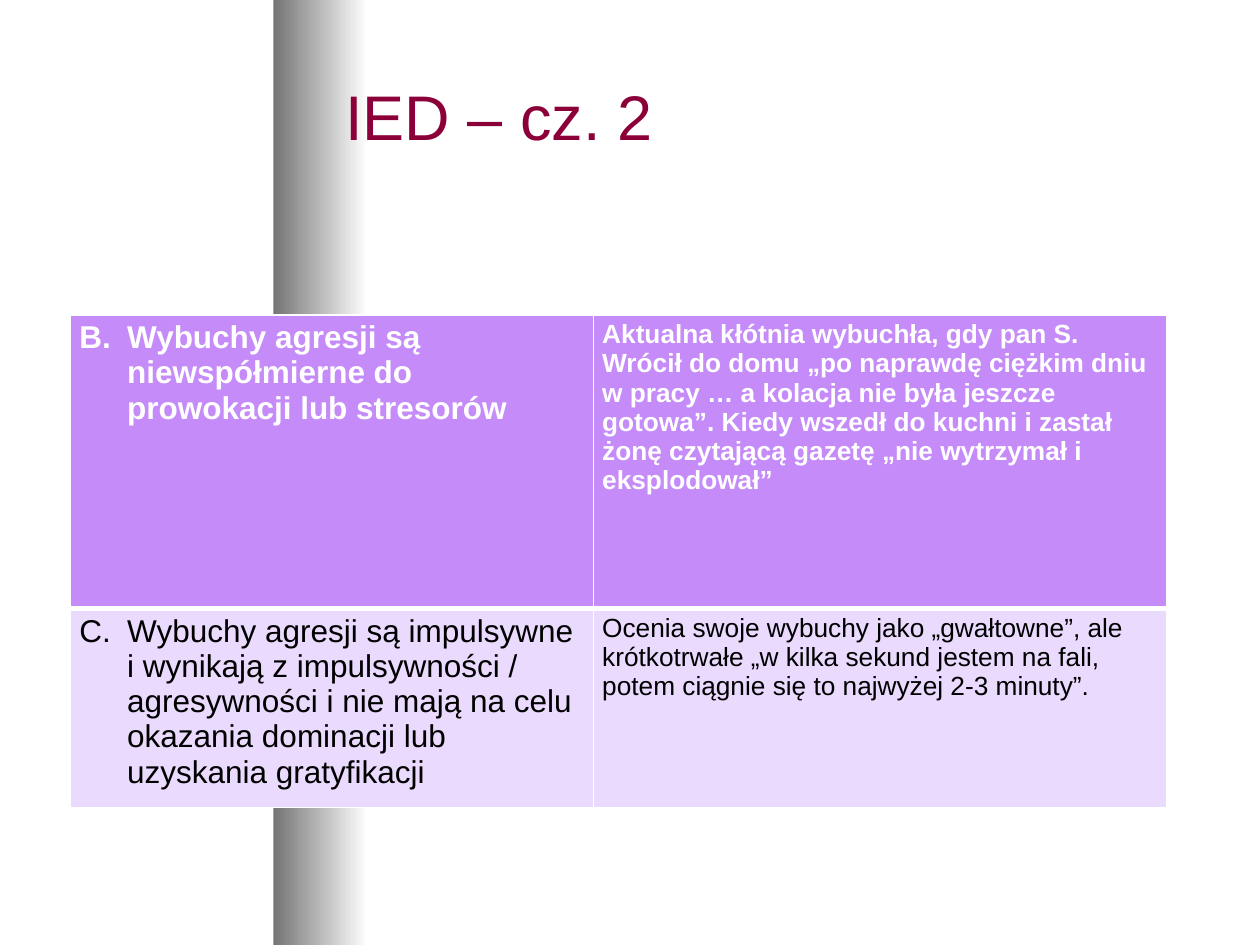
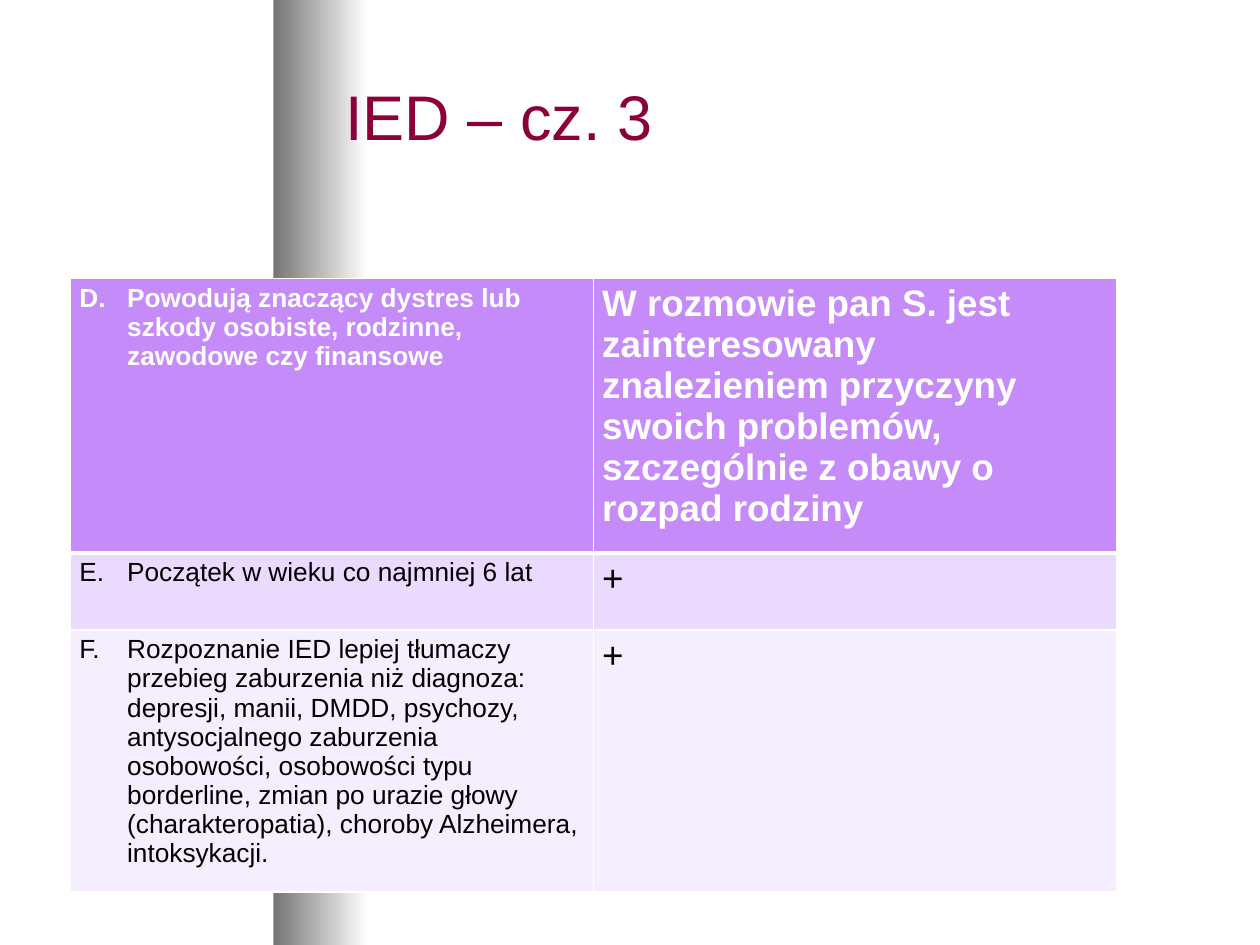
from pptx import Presentation
from pptx.dml.color import RGBColor as RGB
from pptx.enum.shapes import MSO_SHAPE as Shape
from pptx.enum.text import MSO_ANCHOR as Anchor
from pptx.oxml.ns import qn
from pptx.util import Inches, Pt
from lxml.etree import SubElement as Sub

FONT = "Arial"
HUES = {"title": "8C0039", "dark": "757575", "white": "FFFFFF", "black": "000000",
        "head": "C58BF9", "odd": "EADAFD", "even": "F5EEFE"}
FILLS = ["head", "odd", "even"]
LEFT, COL = 0.56, 4.15  # table edge and the width of its first column

# Each row: height, then (text, size) for the criterion and the case note
SLIDES = [
    {"title": "IED – cz. 2", "top": 2.5, "note": 4.55, "first": 2, "rows": [
        (2.33, ("Wybuchy agresji są niewspółmierne do prowokacji lub stresorów", 18),
         ("Aktualna kłótnia wybuchła, gdy pan S. Wrócił do domu „po naprawdę ciężkim dniu "
          "w pracy … a kolacja nie była jeszcze gotowa”. Kiedy wszedł do kuchni i zastał "
          "żonę czytającą gazetę „nie wytrzymał i eksplodował”", 15)),
        (1.57, ("Wybuchy agresji są impulsywne i wynikają z impulsywności / agresywności "
                "i nie mają na celu okazania dominacji lub uzyskania gratyfikacji", 18),
         ("Ocenia swoje wybuchy jako „gwałtowne”, ale krótkotrwałe „w kilka sekund jestem "
          "na fali, potem ciągnie się to najwyżej 2-3 minuty”.", 15)),
    ]},
    {"title": "IED – cz. 3", "top": 2.21, "note": COL, "first": 4, "rows": [
        (2.17, ("Powodują znaczący dystres lub szkody osobiste, rodzinne, zawodowe "
                "czy finansowe", 15),
         ("W rozmowie pan S. jest zainteresowany znalezieniem przyczyny swoich problemów, "
          "szczególnie z obawy o rozpad rodziny", 21)),
        (0.61, ("Początek w wieku co najmniej 6 lat", 15), ("+", 21)),
        (1.93, ("Rozpoznanie IED lepiej tłumaczy przebieg zaburzenia niż diagnoza: depresji, "
                "manii, DMDD, psychozy, antysocjalnego zaburzenia osobowości, osobowości typu "
                "borderline, zmian po urazie głowy (charakteropatia), choroby Alzheimera, "
                "intoksykacji.", 15), ("+", 21)),
    ]},
]


def write(para, text, size, hue, bold=False):
    run = para.add_run()
    run.text = text
    font = run.font
    font.name, font.size, font.bold = FONT, Pt(size), bold
    font.color.rgb = RGB.from_string(HUES[hue])


def edge(cell, row):
    """Draw white cell borders, thicker under the head row."""
    props = cell._tc.get_or_add_tcPr()
    thick = {"lnB": row == 0, "lnT": row == 1}
    for side in ("lnL", "lnR", "lnT", "lnB"):
        line = Sub(props, qn(f"a:{side}"), w=str(Pt(3 if thick.get(side) else 1)))
        Sub(Sub(line, qn("a:solidFill")), qn("a:srgbClr"), val=HUES["white"])


deck = Presentation()
deck.slide_width, deck.slide_height = Inches(10), Inches(7.5)

for data in SLIDES:
    slide = deck.slides.add_slide(deck.slide_layouts[6])

    band = slide.shapes.add_shape(Shape.RECTANGLE, Inches(2.17), 0,
                                  Inches(0.75), deck.slide_height)
    band.shadow.inherit = False
    band.line.fill.background()
    band.fill.gradient()
    band.fill.gradient_angle = 0
    for stop, hue in zip(band.fill.gradient_stops, ("dark", "white")):
        stop.color.rgb = RGB.from_string(HUES[hue])

    box = slide.shapes.add_textbox(Inches(2.67), Inches(0.25), Inches(7), Inches(1.33))
    frame = box.text_frame
    frame.word_wrap = True
    frame.vertical_anchor = Anchor.MIDDLE
    frame.margin_left = frame.margin_right = Inches(0.07)
    write(frame.paragraphs[0], data["title"], 36, "title")

    rows = data["rows"]
    tall = sum(row[0] for row in rows)
    grid = slide.shapes.add_table(len(rows), 2, Inches(LEFT), Inches(data["top"]),
                                  Inches(COL + data["note"]), Inches(tall)).table
    grid.first_row = grid.horz_banding = False
    for col, width in zip(grid.columns, (COL, data["note"])):
        col.width = Inches(width)

    for r, (height, *texts) in enumerate(rows):
        grid.rows[r].height = Inches(height)
        for c, (text, size) in enumerate(texts):
            cell = grid.cell(r, c)
            cell.margin_left = cell.margin_right = Inches(0.07)
            cell.margin_top = cell.margin_bottom = Inches(0.04)
            edge(cell, r)
            cell.fill.solid()
            cell.fill.fore_color.rgb = RGB.from_string(HUES[FILLS[r]])
            para = cell.text_frame.paragraphs[0]
            if c == 0:
                props = para._p.get_or_add_pPr()
                props.set("marL", str(Inches(0.38)))
                props.set("indent", str(-Inches(0.38)))
                Sub(props, qn("a:buAutoNum"), type="alphaUcPeriod",
                    startAt=str(data["first"] + r))
            write(para, text, size, "black" if r else "white", r == 0)

deck.save("out.pptx")
